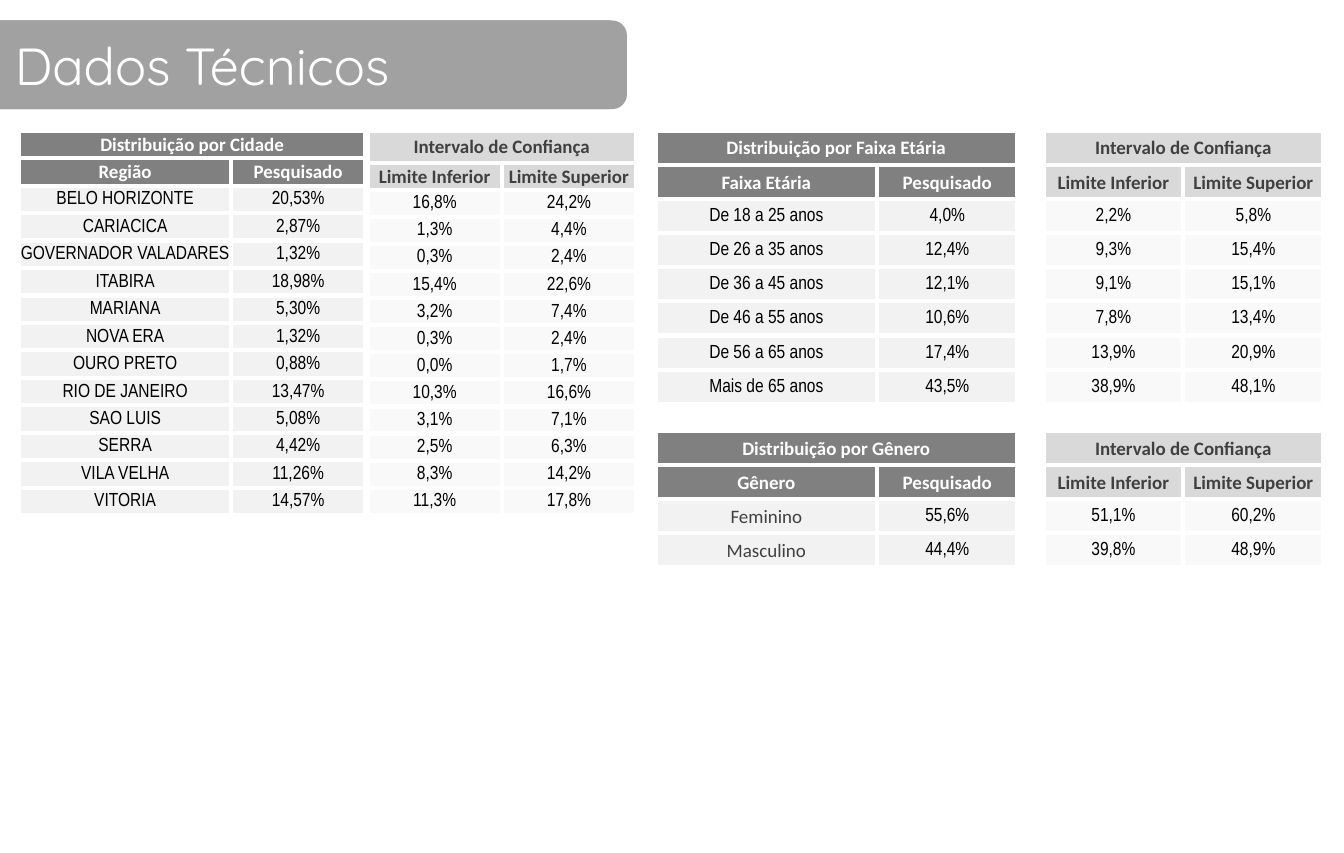
import lxml.etree
import pptx
import pptx.dml.color
import pptx.enum.shapes
import pptx.enum.text
import pptx.oxml.ns
import pptx.util

TITLE = "Dados Técnicos"
BOUNDS = ("Intervalo de Confiança", "Limite Inferior", "Limite Superior")
FOUND = "Pesquisado"
CITY = ("Distribuição por Cidade", "Região", [
    ("BELO HORIZONTE", "20,53%", "16,8%", "24,2%"),
    ("CARIACICA", "2,87%", "1,3%", "4,4%"),
    ("GOVERNADOR VALADARES", "1,32%", "0,3%", "2,4%"),
    ("ITABIRA", "18,98%", "15,4%", "22,6%"),
    ("MARIANA", "5,30%", "3,2%", "7,4%"),
    ("NOVA ERA", "1,32%", "0,3%", "2,4%"),
    ("OURO PRETO", "0,88%", "0,0%", "1,7%"),
    ("RIO DE JANEIRO", "13,47%", "10,3%", "16,6%"),
    ("SAO LUIS", "5,08%", "3,1%", "7,1%"),
    ("SERRA", "4,42%", "2,5%", "6,3%"),
    ("VILA VELHA", "11,26%", "8,3%", "14,2%"),
    ("VITORIA", "14,57%", "11,3%", "17,8%"),
])
AGE = ("Distribuição por Faixa Etária", "Faixa Etária", [
    ("De 18 a 25 anos", "4,0%", "2,2%", "5,8%"),
    ("De 26 a 35 anos", "12,4%", "9,3%", "15,4%"),
    ("De 36 a 45 anos", "12,1%", "9,1%", "15,1%"),
    ("De 46 a 55 anos", "10,6%", "7,8%", "13,4%"),
    ("De 56 a 65 anos", "17,4%", "13,9%", "20,9%"),
    ("Mais de 65 anos", "43,5%", "38,9%", "48,1%"),
])
GENDER = ("Distribuição por Gênero", "Gênero", [
    ("Feminino", "55,6%", "51,1%", "60,2%"),
    ("Masculino", "44,4%", "39,8%", "48,9%"),
])

# Each cell style: fill, font, text colour, bold
THEME = {
    "banner": "A1A1A1", "white": "FFFFFF", "title font": "Quicksand",
    "title size": 33, "cell size": 12, "border": 3,
    "dark": ("808080", "Calibri", "FFFFFF", True),
    "light": ("D9D9D9", "Calibri", "404040", True),
    "body": ("F2F2F2", "Arial Narrow", "000000", False),
    "label": ("F2F2F2", "Calibri", "404040", False),
    "pale": ("F9F9F9", "Arial Narrow", "000000", False),
}
Inches = pptx.util.Inches
Pt = pptx.util.Pt
MID = pptx.enum.text.MSO_ANCHOR.MIDDLE
ALIGN = pptx.enum.text.PP_ALIGN
BLANK = ("", None)


def rgb(code):
    return pptx.dml.color.RGBColor.from_string(code)


def put(item, values):
    for name, value in values.items():
        setattr(item, name, value)


def paint(fill, code):
    fill.solid()
    fill.fore_color.rgb = rgb(code)


def block(head, name, rows, first="body"):
    """Return five columns of (text, style): shares, a gap, then bounds."""
    top, low, high = BOUNDS
    cells = [
        [(head, "dark"), BLANK, BLANK, (top, "light"), BLANK],
        [(name, "dark"), (FOUND, "dark"), BLANK, (low, "light"), (high, "light")],
    ]
    for label, share, lower, upper in rows:
        cells.append([(label, first), (share, "body"), BLANK,
                      (lower, "pale"), (upper, "pale")])
    return cells


def edge(cell):
    props = cell._tc.get_or_add_tcPr()
    qn = pptx.oxml.ns.qn
    for side in ("a:lnL", "a:lnR", "a:lnT", "a:lnB"):
        line = lxml.etree.SubElement(props, qn(side), w=str(Pt(THEME["border"])))
        solid = lxml.etree.SubElement(line, qn("a:solidFill"))
        lxml.etree.SubElement(solid, qn("a:srgbClr"), val=THEME["white"])


def fill_cell(cell, text, style):
    put(cell, {"margin_left": Inches(0.01), "margin_right": Inches(0.01),
               "margin_top": Inches(0.01), "margin_bottom": 0,
               "vertical_anchor": MID})
    edge(cell)
    para = cell.text_frame.paragraphs[0]
    if style is None:
        cell.fill.background()
        lxml.etree.SubElement(para._p, pptx.oxml.ns.qn("a:endParaRPr"),
                              sz=str(THEME["cell size"] * 100))
        return
    back, face, ink, bold = THEME[style]
    paint(cell.fill, back)
    para.alignment = ALIGN.CENTER
    run = para.add_run()
    run.text = text
    put(run.font, {"name": face, "size": Pt(THEME["cell size"]), "bold": bold})
    run.font.color.rgb = rgb(ink)


def add_grid(slide, left, top, widths, heights, cells, spans):
    """Spans are (first row, first column, last row, last column)."""
    frame = slide.shapes.add_table(
        len(heights), len(widths), Inches(left), Inches(top),
        Inches(sum(widths)), Inches(sum(heights)))
    table = frame.table
    put(table, {"first_row": False, "horz_banding": False})
    for col, width in zip(table.columns, widths):
        col.width = Inches(width)
    for row, height, line in zip(table.rows, heights, cells):
        row.height = Inches(height)
        for cell, (text, style) in zip(row.cells, line):
            fill_cell(cell, text, style)
    for r1, c1, r2, c2 in spans:
        table.cell(r1, c1).merge(table.cell(r2, c2))


def add_title(slide):
    title = slide.shapes.title
    put(title, {"left": 0, "top": Inches(0.18),
                "width": Inches(5.36), "height": Inches(0.78)})
    paint(title.fill, THEME["banner"])
    banner = slide.shapes.add_shape(
        pptx.enum.shapes.MSO_SHAPE.ROUNDED_RECTANGLE,
        Inches(-0.24), title.top, Inches(5.75), title.height)
    banner.shadow.inherit = False
    paint(banner.fill, THEME["banner"])
    banner.line.fill.background()
    title.element.addprevious(banner.element)
    put(title.text_frame, {"text": TITLE, "vertical_anchor": MID,
                           "word_wrap": True, "margin_left": Inches(0.13)})
    para = title.text_frame.paragraphs[0]
    para.alignment = ALIGN.LEFT
    font = para.runs[0].font
    put(font, {"name": THEME["title font"], "size": Pt(THEME["title size"])})
    font.color.rgb = rgb(THEME["white"])


def main():
    deck = pptx.Presentation()
    deck.slide_width = pptx.util.Cm(30)
    deck.slide_height = Inches(7.5)
    slide = deck.slides.add_slide(deck.slide_layouts[5])
    add_title(slide)

    top, tall, pair = 1.15, 3.38, (0, 0, 0, 1)
    city = block(*CITY)
    count = len(city)
    add_grid(slide, 0.17, top, [1.86, 1.18], [tall / count] * count,
             [row[:2] for row in city], [pair])

    age = block(*AGE)
    gap = len(age)
    people = age + [[BLANK] * 5] + block(*GENDER, first="label")
    spans = [(row, col, row, col + 1)
             for row in (0, gap, gap + 1) for col in (0, 3)]
    spans += [(0, 2, 1, 2), (gap, 2, gap + 2, 2)]
    heights = [0.3] * len(people)
    heights[gap] = 0.24
    add_grid(slide, 5.76, top, [1.95, 1.23, 0.23, 1.23, 1.23],
             heights, people, spans)

    add_grid(slide, 3.23, top, [1.18] * 2,
             [0.28] + [(tall - 0.28) / (count - 1)] * (count - 1),
             [row[3:] for row in city], [pair])
    deck.save("out.pptx")


if __name__ == "__main__":
    main()
